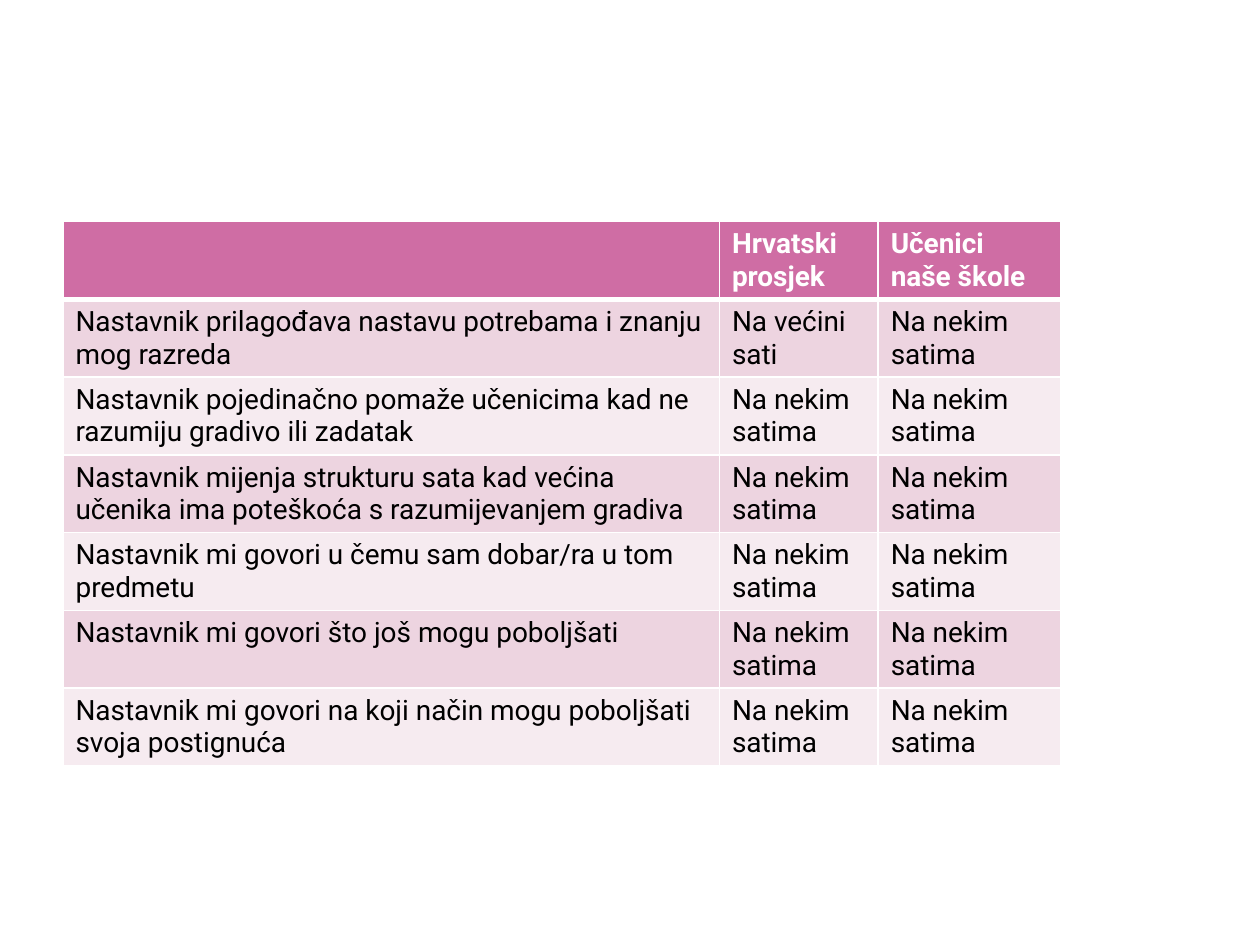
import pptx
import pptx.dml.color
import pptx.oxml
import pptx.oxml.ns
import pptx.util

WHITE = pptx.dml.color.RGBColor(0xFF, 0xFF, 0xFF)
BLACK = pptx.dml.color.RGBColor(0x00, 0x00, 0x00)
HEADER_PINK = pptx.dml.color.RGBColor(0xCF, 0x6D, 0xA4)
BAND_PINKS = (
    pptx.dml.color.RGBColor(0xF6, 0xEB, 0xF0),
    pptx.dml.color.RGBColor(0xED, 0xD4, 0xE0),
)

SLIDE_WIDTH = pptx.util.Inches(10)
SLIDE_HEIGHT = pptx.util.Inches(7.5)
TABLE_BOX = (
    pptx.util.Inches(0.5),
    pptx.util.Inches(1.76),
    pptx.util.Inches(7.92),
    pptx.util.Inches(4.43),
)
COLUMN_WIDTHS = (5.21, 1.26, 1.45)
ROW_HEIGHT = pptx.util.Inches(0.41)

BASE_FONT = {"name": "Roboto", "size": pptx.util.Pt(16)}
HEADER_FONT = {**BASE_FONT, "bold": True}
BODY_FONT = {**BASE_FONT, "bold": False}

MOST_LESSONS = "Na većini sati"
SOME_LESSONS = "Na nekim satima"
ROWS = (
    ("", "Hrvatski prosjek", "Učenici naše škole"),
    ("Nastavnik prilagođava nastavu potrebama i znanju mog razreda", MOST_LESSONS, SOME_LESSONS),
    ("Nastavnik pojedinačno pomaže učenicima kad ne razumiju gradivo ili zadatak", SOME_LESSONS, SOME_LESSONS),
    ("Nastavnik mijenja strukturu sata kad većina učenika ima poteškoća s razumijevanjem gradiva",
     SOME_LESSONS, SOME_LESSONS),
    ("Nastavnik mi govori u čemu sam dobar/ra u tom predmetu", SOME_LESSONS, SOME_LESSONS),
    ("Nastavnik mi govori što još mogu poboljšati", SOME_LESSONS, SOME_LESSONS),
    ("Nastavnik mi govori na koji način mogu poboljšati svoja postignuća", SOME_LESSONS, SOME_LESSONS),
)


def set_borders(cell, widths):
    """Draw white borders of the given point widths, keyed by side."""
    properties = cell._tc.get_or_add_tcPr()
    for position, (side, width) in enumerate(widths.items()):
        border = pptx.oxml.parse_xml(
            f'<a:ln{side} {pptx.oxml.ns.nsdecls("a")} w="{pptx.util.Pt(width)}">'
            f'<a:solidFill><a:srgbClr val="{WHITE}"/></a:solidFill></a:ln{side}>'
        )
        properties.insert(position, border)


def fill_cell(cell, text, fill, font_values, font_color, borders):
    """Write one cell with its fill, font and borders."""
    cell.fill.solid()
    cell.fill.fore_color.rgb = fill
    cell.text = text
    font = cell.text_frame.paragraphs[0].font
    targets = [font] + [run.font for run in cell.text_frame.paragraphs[0].runs]
    for target in targets:
        for name, value in font_values.items():
            setattr(target, name, value)
        target.color.rgb = font_color
    set_borders(cell, borders)


def add_survey_table(slide, box):
    """Place the survey comparison table in the given box."""
    frame = slide.shapes.add_table(len(ROWS), len(COLUMN_WIDTHS), *box)
    table = frame.table
    for column, width in zip(table.columns, COLUMN_WIDTHS):
        column.width = pptx.util.Inches(width)
    for row_index, texts in enumerate(ROWS):
        table.rows[row_index].height = ROW_HEIGHT
        is_header = row_index == 0
        fill = HEADER_PINK if is_header else BAND_PINKS[row_index % 2]
        font_values = HEADER_FONT if is_header else BODY_FONT
        font_color = WHITE if is_header else BLACK
        borders = {
            "L": 1,
            "R": 1,
            "T": 3 if row_index == 1 else 1,
            "B": 3 if is_header else 1,
        }
        for column_index, text in enumerate(texts):
            cell = table.cell(row_index, column_index)
            fill_cell(cell, text, fill, font_values, font_color, borders)
    frame.height = box[3]


def main():
    """Build and save the presentation."""
    presentation = pptx.Presentation()
    presentation.slide_width = SLIDE_WIDTH
    presentation.slide_height = SLIDE_HEIGHT
    slide = presentation.slides.add_slide(presentation.slide_layouts[6])
    add_survey_table(slide, TABLE_BOX)
    presentation.save("out.pptx")


if __name__ == "__main__":
    main()
